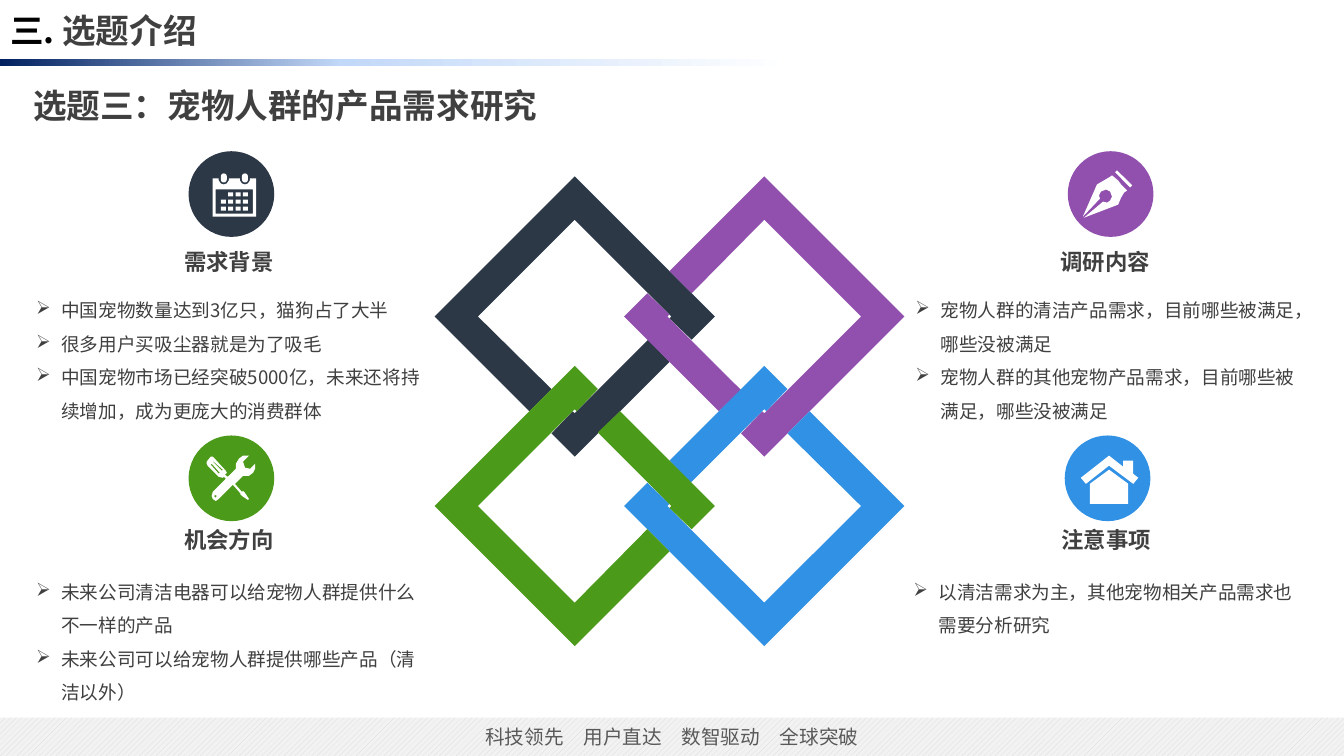
from copy import deepcopy

from pptx import Presentation
from pptx.dml.color import RGBColor
from pptx.enum.dml import MSO_PATTERN
from pptx.enum.shapes import MSO_SHAPE
from pptx.enum.text import MSO_ANCHOR, MSO_AUTO_SIZE, PP_ALIGN
from pptx.oxml.ns import qn
from pptx.util import Inches, Pt

RECT = MSO_SHAPE.RECTANGLE
PILL = MSO_SHAPE.ROUNDED_RECTANGLE
DISC = MSO_SHAPE.FLOWCHART_CONNECTOR
STRIPES = MSO_PATTERN.WIDE_UPWARD_DIAGONAL
MIDDLE = MSO_ANCHOR.MIDDLE
NO_FIT = MSO_AUTO_SIZE.NONE
LEFT, CENTER = PP_ALIGN.LEFT, PP_ALIGN.CENTER

FONT = "Noto Sans CJK SC"
COLORS = {
    "black": "000000", "text": "404040", "footer": "595959", "white": "FFFFFF",
    "navy": "2C3846", "purple": "914FAE", "blue": "3191E4", "green": "4C9A19",
    "bar_start": "002060", "bar_middle": "C2D8F8",
    "stripe": "D9D9D9", "stripe_back": "F2F2F2",
}
DISC_SIZE = 0.85

RING_BODY = [(1.39, 0), (1.16, 0.23), (0.94, 0.02), (0.96, 0), (0.94, -0.02),
             (0, -0.96), (-0.96, 0), (-0.23, 0.72), (-0.45, 0.94), (-1.39, 0), (0, -1.39)]
RING_CORNER = [(0.24, 0.72), (0.02, 0.94), (0, 0.96), (-0.02, 0.94), (-0.23, 1.16),
               (0, 1.39), (0.94, 0.45), (0.73, 0.23)]
RINGS = [("navy", 5.7, 3.14), ("purple", 7.58, 3.14), ("blue", 7.58, 5.02), ("green", 5.7, 5.02)]

NIB = [(11.12, 1.83), (11.09, 1.79), (11.03, 1.74), (11, 1.76), (10.88, 1.83), (10.74, 2.15),
       (10.91, 1.97), (10.9, 1.94), (10.92, 1.9), (10.97, 1.88), (11.01, 1.9), (11.03, 1.95),
       (11.01, 1.99), (10.98, 2.01), (10.94, 2), (10.75, 2.16), (11.09, 2.03), (11.12, 1.96),
       (11.15, 1.91), (11.18, 1.89)]
PEN_BAND = [(11.08, 1.69), (11.23, 1.84), (11.21, 1.86), (11.06, 1.71)]
CALENDAR_NOTCH = [(0.05, 1.77), (0.05, 1.79), (0.03, 1.82), (0, 1.83),
                  (-0.03, 1.82), (-0.05, 1.79), (-0.05, 1.77)]
CALENDAR_PAGE = [(2.51, 2.12), (2.14, 2.12), (2.14, 1.88), (2.51, 1.88)]
HOUSE_WALLS = [(10.81, 4.8), (10.81, 5), (11.19, 5), (11.19, 4.8), (11, 4.66)]
HOUSE_ROOF = [(11.24, 4.7), (11.24, 4.57), (11.14, 4.57), (11.14, 4.63), (11, 4.52),
              (10.72, 4.74), (10.77, 4.8), (11, 4.62), (11.24, 4.8), (11.29, 4.74)]
TOOLS = [(2.05, 4.58), (2.09, 4.53), (2.11, 4.53), (2.13, 4.55), (2.24, 4.67), (2.25, 4.69),
         (2.23, 4.71), (2.26, 4.73), (2.34, 4.65), (2.34, 4.6), (2.37, 4.55), (2.41, 4.52),
         (2.47, 4.52), (2.41, 4.58), (2.43, 4.64), (2.48, 4.65), (2.53, 4.6), (2.53, 4.65),
         (2.51, 4.69), (2.47, 4.72), (2.41, 4.72), (2.33, 4.8), (2.4, 4.88), (2.41, 4.87),
         (2.43, 4.89), (2.47, 4.95), (2.46, 4.96), (2.4, 4.92), (2.38, 4.9), (2.39, 4.9),
         (2.31, 4.81), (2.17, 4.95), (2.14, 4.97), (2.11, 4.95), (2.1, 4.92), (2.11, 4.88),
         (2.24, 4.75), (2.22, 4.73), (2.21, 4.74), (2.17, 4.73), (2.06, 4.62), (2.05, 4.6)]
TOOL_HOLES = [
    [(2.14, 4.91), (2.12, 4.92), (2.14, 4.94), (2.15, 4.92)],
    [(2.2, 4.67), (2.21, 4.66), (2.12, 4.58), (2.11, 4.58)],
    [(2.17, 4.7), (2.18, 4.69), (2.1, 4.6), (2.09, 4.61)],
]

TOPICS = [
    ("需求背景", "navy", (1.87, 1.5), (1.73, 2.41), (0.26, 2.81, 1.45),
     ["中国宠物数量达到3亿只，猫狗占了大半",
      "很多用户买吸尘器就是为了吸毛",
      "中国宠物市场已经突破5000亿，未来还将持续增加，成为更庞大的消费群体"]),
    ("调研内容", "purple", (10.59, 1.5), (10.42, 2.41), (8.98, 2.81, 1.45),
     ["宠物人群的清洁产品需求，目前哪些被满足，哪些没被满足",
      "宠物人群的其他宠物产品需求，目前哪些被满足，哪些没被满足"]),
    ("机会方向", "green", (1.87, 4.32), (1.73, 5.17), (0.26, 5.6, 1.45),
     ["未来公司清洁电器可以给宠物人群提供什么不一样的产品",
      "未来公司可以给宠物人群提供哪些产品（清洁以外）"]),
    ("注意事项", "blue", (10.56, 4.32), (10.43, 5.17), (8.96, 5.6, 0.77),
     ["以清洁需求为主，其他宠物相关产品需求也需要分析研究"]),
]


def rgb(color):
    return RGBColor.from_string(COLORS[color])


def paint(shape, color):
    shape.fill.solid()
    shape.fill.fore_color.rgb = rgb(color)
    shape.line.fill.background()
    shape.shadow.inherit = False


def add_preset(shapes, kind, left, top, width, height, color):
    shape = shapes.add_shape(kind, Inches(left), Inches(top), Inches(width), Inches(height))
    paint(shape, color)
    return shape


def add_outline(shapes, contours, color):
    unit = Inches(0.01)
    scaled = [[(x * 100, y * 100) for x, y in contour] for contour in contours]
    builder = shapes.build_freeform(*scaled[0][0], scale=unit)
    for number, contour in enumerate(scaled):
        if number:
            builder.move_to(*contour[0])
        builder.add_line_segments(contour[1:], close=True)
    paint(builder.convert_to_shape(), color)


def add_run(paragraph, text, size, color, bold=False):
    run = paragraph.add_run()
    run.text = text
    run.font.size = Pt(size)
    run.font.bold = bold
    run.font.color.rgb = rgb(color)
    run.font.name = FONT
    east_asian = run.font._element.makeelement(qn("a:ea"), {"typeface": FONT})
    run.font._element.find(qn("a:latin")).addnext(east_asian)


def add_text_frame(slide, left, top, width, height, wrap):
    box = slide.shapes.add_textbox(Inches(left), Inches(top), Inches(width), Inches(height))
    box.text_frame.word_wrap = wrap
    return box.text_frame


def add_heading(slide, text, left, top, width, height, size):
    frame = add_text_frame(slide, left, top, width, height, False)
    add_run(frame.paragraphs[0], text, size, "text", True)


def add_bullets(slide, left, top, height, points):
    frame = add_text_frame(slide, left, top, 4.05, height, True)
    for number, point in enumerate(points):
        paragraph = frame.add_paragraph() if number else frame.paragraphs[0]
        properties = paragraph._p.get_or_add_pPr()
        properties.set("marL", str(Inches(0.25)))
        properties.set("indent", str(-Inches(0.25)))
        properties.append(properties.makeelement(qn("a:buChar"), {"char": "➢"}))
        paragraph.line_spacing = 1.5
        add_run(paragraph, point, 13.3, "text")


def add_title(slide):
    title = slide.shapes.title
    title.left, title.top, title.width, title.height = Inches(0), Inches(0), Inches(5.99), Inches(0.59)
    frame = title.text_frame
    frame.auto_size = NO_FIT
    frame.vertical_anchor = MIDDLE
    frame.paragraphs[0].alignment = LEFT
    add_run(frame.paragraphs[0], "三. ", 24, "black", True)
    add_run(frame.paragraphs[0], "选题介绍", 24, "text", True)


def add_title_bar(slide):
    bar = add_preset(slide.shapes, RECT, 0, 0.59, 7.87, 0.07, "white")
    bar.fill.gradient()
    bar.fill.gradient_angle = 0
    stops = bar._element.spPr.find(".//" + qn("a:gsLst"))
    stops.insert(1, deepcopy(stops[0]))
    steps = [(0, "bar_start"), (0.43, "bar_middle"), (1, "white")]
    for stop, (position, color) in zip(bar.fill.gradient_stops, steps):
        stop.position = position
        stop.color.rgb = rgb(color)


def add_footer(slide):
    footer = add_preset(slide.shapes, RECT, 0, 7.12, 13.33, 0.38, "stripe_back")
    footer.fill.patterned()
    footer.fill.pattern = STRIPES
    footer.fill.fore_color.rgb = rgb("stripe")
    footer.fill.back_color.rgb = rgb("stripe_back")
    footer.text_frame.vertical_anchor = MIDDLE
    paragraph = footer.text_frame.paragraphs[0]
    paragraph.alignment = CENTER
    add_run(paragraph, "科技领先　用户直达　数智驱动　全球突破", 14, "footer")


def add_rings(slide):
    pieces = [RING_BODY, RING_CORNER]
    for color, center_x, center_y in RINGS:
        placed = [[(center_x + x, center_y + y) for x, y in piece] for piece in pieces]
        add_outline(slide.shapes, placed, color)
        pieces = [[(-y, x) for x, y in piece] for piece in pieces]


def add_calendar(slide):
    icon = slide.shapes.add_group_shape().shapes
    notches = [(center + x, y) for center in (2.43, 2.22) for x, y in CALENDAR_NOTCH]
    frame = [(2.54, 1.77)] + notches + [(2.11, 1.77), (2.11, 2.15), (2.54, 2.15)]
    add_outline(icon, [frame, CALENDAR_PAGE], "white")
    for left in (2.19, 2.4):
        add_preset(icon, PILL, left, 1.72, 0.06, 0.09, "white").adjustments[0] = 0.5
    for row in range(3):
        for column in range(0 if row else 1, 4):
            add_preset(icon, RECT, 2.19 + 0.073 * column, 1.91 + 0.07 * row, 0.05, 0.04, "white")


def add_grouped_icon(slide, outlines):
    icon = slide.shapes.add_group_shape().shapes
    for outline in outlines:
        add_outline(icon, [outline], "white")


def main():
    deck = Presentation()
    deck.slide_width, deck.slide_height = Inches(13.33), Inches(7.5)
    slide = deck.slides.add_slide(deck.slide_layouts[5])
    add_title_bar(slide)
    add_footer(slide)
    add_title(slide)
    add_heading(slide, "选题三：宠物人群的产品需求研究", 0.23, 0.79, 5.25, 0.5, 24)
    add_rings(slide)
    for heading, color, disc_place, heading_place, bullet_place, points in TOPICS:
        add_preset(slide.shapes, DISC, *disc_place, DISC_SIZE, DISC_SIZE, color)
        add_heading(slide, heading, *heading_place, 1.1, 0.37, 16)
        add_bullets(slide, *bullet_place, points)
    add_calendar(slide)
    add_grouped_icon(slide, [NIB, PEN_BAND])
    add_grouped_icon(slide, [HOUSE_WALLS, HOUSE_ROOF])
    add_outline(slide.shapes, [TOOLS] + TOOL_HOLES, "white")
    deck.save("out.pptx")


if __name__ == "__main__":
    main()
